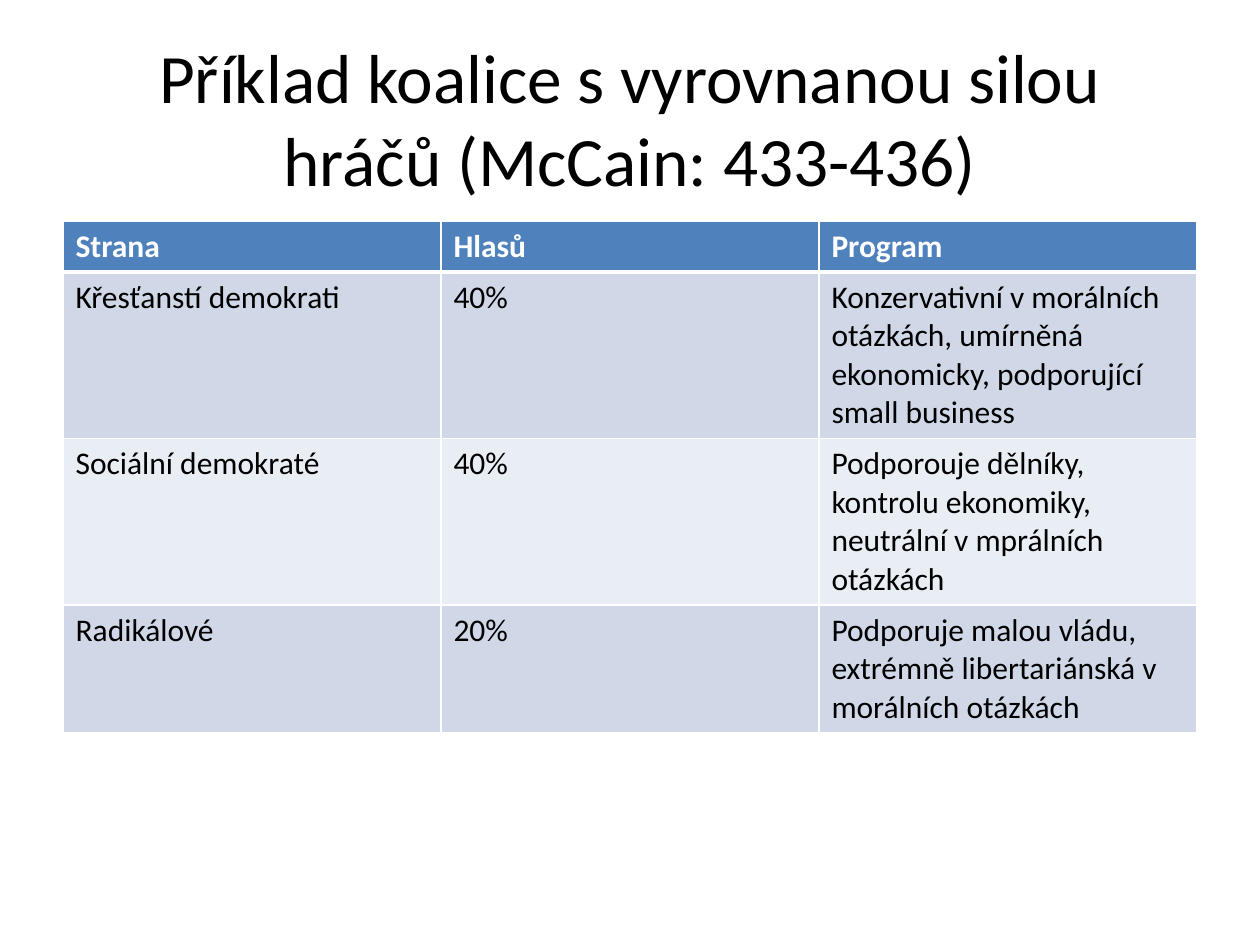
from lxml.etree import SubElement
from pptx import Presentation
from pptx.dml.color import RGBColor
from pptx.enum.text import MSO_ANCHOR, MSO_AUTO_SIZE, PP_ALIGN
from pptx.oxml.ns import qn
from pptx.util import Pt

TITLE = "Příklad koalice s vyrovnanou silou hráčů (McCain: 433-436)"
HEADINGS = ("Strana", "Hlasů", "Program")
PARTIES = [
    ("Křesťanstí demokrati", "40%",
     "Konzervativní v morálních otázkách, umírněná ekonomicky, podporující small business"),
    ("Sociální demokraté", "40%",
     "Podporouje dělníky, kontrolu ekonomiky, neutrální v mprálních otázkách"),
    ("Radikálové", "20%",
     "Podporuje malou vládu, extrémně libertariánská v morálních otázkách"),
]

FONT = "Calibri"
BLACK, WHITE = "000000", "FFFFFF"
HEADING_FILL = "4F81BD"
BAND_FILLS = ("D0D8E8", "E9EDF4")

EMU_PER_PX = 914400 // 126
SLIDE_W, SLIDE_H = 1260, 945
MARGIN = 63
CONTENT_W = SLIDE_W - 2 * MARGIN
TITLE_TOP, TITLE_H = 38, 158
TABLE_TOP, TABLE_H, MIN_ROW_H = 221, 505, 51


def px(length):
    return length * EMU_PER_PX


def rgb(color):
    return RGBColor.from_string(color)


def add_run(paragraph, text, size, color, bold=False):
    run = paragraph.add_run()
    run.text = text
    run.font.name = FONT
    run.font.size = Pt(size)
    run.font.bold = bold
    run.font.color.rgb = rgb(color)


def set_borders(cell, widths):
    """Draw white cell borders; widths maps the sides L, R, T, B to points."""
    properties = cell._tc.get_or_add_tcPr()
    for side, width in widths.items():
        line = SubElement(properties, qn(f"a:ln{side}"), w=str(Pt(width)))
        fill = SubElement(line, qn("a:solidFill"))
        SubElement(fill, qn("a:srgbClr"), val=WHITE)


def add_title(slide):
    title = slide.shapes.title
    title.left, title.top = px(MARGIN), px(TITLE_TOP)
    title.width, title.height = px(CONTENT_W), px(TITLE_H)
    frame = title.text_frame
    frame.word_wrap = True
    frame.auto_size = MSO_AUTO_SIZE.NONE
    frame.vertical_anchor = MSO_ANCHOR.MIDDLE
    paragraph = frame.paragraphs[0]
    paragraph.alignment = PP_ALIGN.CENTER
    add_run(paragraph, TITLE, 39.6, BLACK)


def add_party_table(slide):
    rows = [HEADINGS, *PARTIES]
    holder = slide.shapes.add_table(
        len(rows), len(HEADINGS),
        px(MARGIN), px(TABLE_TOP), px(CONTENT_W), px(TABLE_H))
    table = holder.table
    for column in table.columns:
        column.width = px(CONTENT_W // len(HEADINGS))
    for r, texts in enumerate(rows):
        table.rows[r].height = px(MIN_ROW_H)
        heading = r == 0
        fill = HEADING_FILL if heading else BAND_FILLS[(r - 1) % 2]
        borders = {"L": 1, "R": 1, "T": 3 if r == 1 else 1, "B": 3 if heading else 1}
        for c, text in enumerate(texts):
            cell = table.cell(r, c)
            set_borders(cell, borders)
            cell.fill.solid()
            cell.fill.fore_color.rgb = rgb(fill)
            add_run(cell.text_frame.paragraphs[0], text, 18,
                    WHITE if heading else BLACK, heading)
    holder.height = px(TABLE_H)


def main():
    deck = Presentation()
    deck.slide_width, deck.slide_height = px(SLIDE_W), px(SLIDE_H)
    slide = deck.slides.add_slide(deck.slide_layouts[5])
    add_title(slide)
    add_party_table(slide)
    deck.save("out.pptx")


if __name__ == "__main__":
    main()
